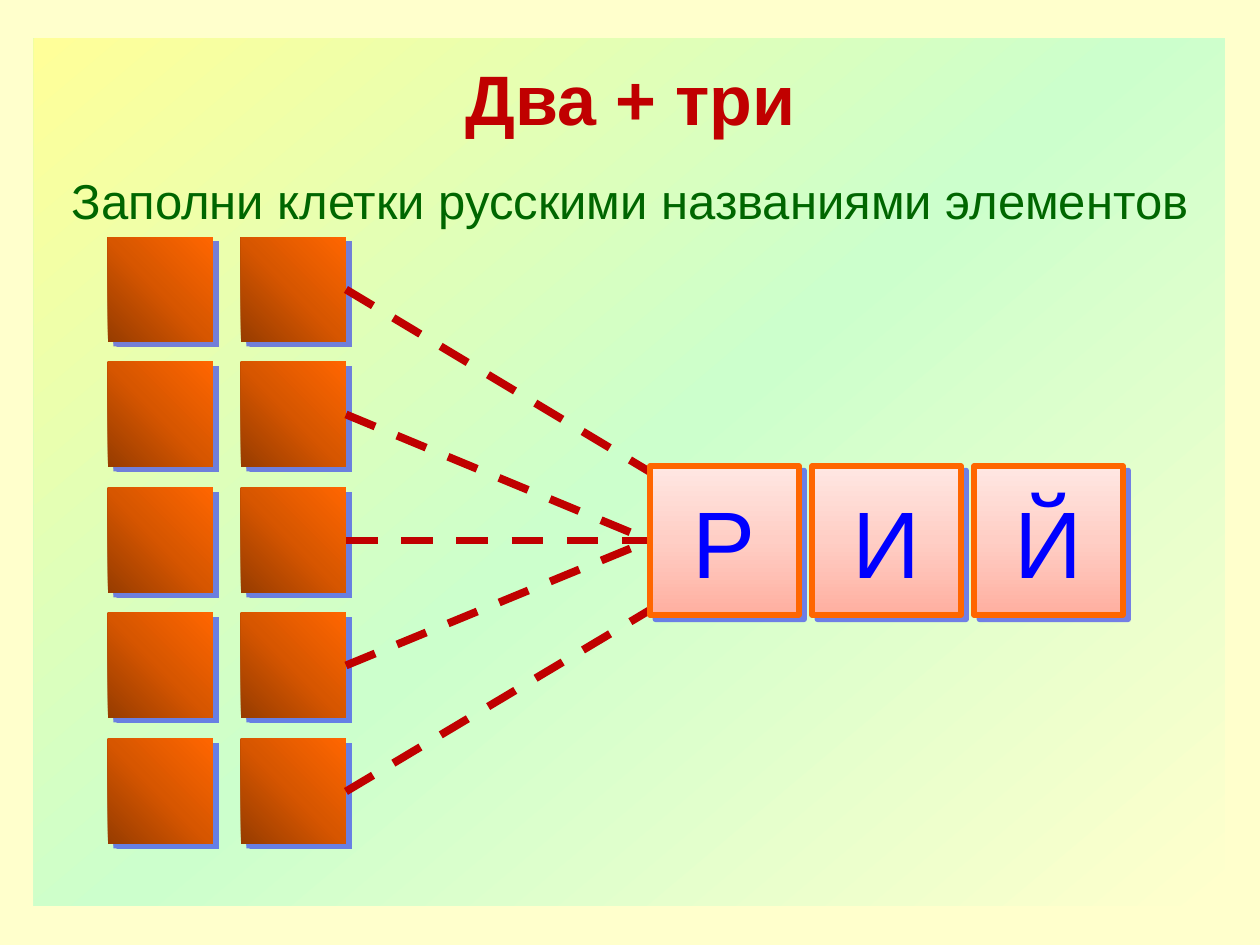
from copy import deepcopy
from dataclasses import dataclass

from lxml.etree import SubElement
from pptx import Presentation
from pptx.dml.color import RGBColor
from pptx.enum.dml import MSO_LINE
from pptx.enum.shapes import MSO_CONNECTOR, MSO_SHAPE
from pptx.enum.text import MSO_ANCHOR, PP_ALIGN
from pptx.oxml.ns import qn
from pptx.util import Emu, Pt


@dataclass(frozen=True)
class Theme:
    font: str = "Arial"
    page: str = "FFFFCC"
    red: str = "C00000"
    green: str = "006600"
    blue: str = "0000FF"
    edge: str = "FF6600"
    panel: tuple = ("FFFFCC", "CCFFCC", "FFFF99")
    cell: tuple = ("973C00", "D75600", "FF6600")
    tile: tuple = ("FFAFA0", "FFCEC5", "FFE7E3")
    head: int = 40
    task: int = 28
    letter: int = 54


THEME = Theme()
ROWS, COLS = 5, 2


def px(n):
    return Emu(round(n * 914400 / 126))


def rgb(code):
    return RGBColor.from_string(code)


def apply(item, values):
    for name, value in values.items():
        setattr(item, name, value)


def blend(shape, colors, angle):
    """Fill with three even stops; the angle runs clockwise."""
    fill = shape.fill
    fill.gradient()
    fill.gradient_angle = 360 - angle
    stops = shape._element.spPr.find(qn("a:gradFill")).find(qn("a:gsLst"))
    stops.insert(1, deepcopy(stops[0]))
    for stop, color, place in zip(fill.gradient_stops, colors, (0, 0.5, 1)):
        stop.color.rgb = rgb(color)
        stop.position = place


def shade(shape):
    """Cast a half-clear blue shadow down and to the right."""
    effects = shape._element.spPr.find(qn("a:effectLst"))
    cast = SubElement(effects, qn("a:outerShdw"), blurRad="0", dist=str(Pt(4)),
                      dir=str(40 * 60000), algn="tl", rotWithShape="0")
    color = SubElement(cast, qn("a:srgbClr"), val=THEME.blue)
    SubElement(color, qn("a:alpha"), val="50000")


def write(shape, text, size, color, bold=False, anchor=MSO_ANCHOR.MIDDLE):
    frame = shape.text_frame
    apply(frame, {"text": text, "word_wrap": True, "vertical_anchor": anchor})
    line = frame.paragraphs[0]
    line.alignment = PP_ALIGN.CENTER
    font = line.runs[0].font
    apply(font, {"name": THEME.font, "size": Pt(size), "bold": bold})
    font.color.rgb = rgb(color)


def add_box(slide, left, top, width, height, colors, angle):
    box = slide.shapes.add_shape(
        MSO_SHAPE.RECTANGLE, px(left), px(top), px(width), px(height))
    box.shadow.inherit = False
    box.line.fill.background()
    blend(box, colors, angle)
    return box


def add_cell(slide, row, col):
    cell = add_box(slide, 108 + 133 * col, 237 + 251 * row // 2, 105, 105,
                   THEME.cell, 315)
    shade(cell)
    return cell


def add_tile(slide, index, letter):
    tile = add_box(slide, 650 + 162 * index, 466, 149, 149, THEME.tile, 270)
    tile.line.color.rgb = rgb(THEME.edge)
    tile.line.width = Pt(3)
    shade(tile)
    write(tile, letter, THEME.letter, THEME.blue)
    return tile


def add_dash(slide, cell, end):
    dash = slide.shapes.add_connector(
        MSO_CONNECTOR.STRAIGHT, px(346), px(290), px(650), px(end))
    dash.begin_connect(cell, 3)
    dash.line.color.rgb = rgb(THEME.red)
    apply(dash.line, {"width": Pt(4.5), "dash_style": MSO_LINE.DASH})
    SubElement(dash._element.spPr, qn("a:effectLst"))
    return dash


def main():
    deck = Presentation()
    apply(deck, {"slide_width": px(1260), "slide_height": px(945)})
    slide = deck.slides.add_slide(deck.slide_layouts[5])
    back = slide.background.fill
    back.solid()
    back.fore_color.rgb = rgb(THEME.page)

    # Panel, moved behind the title
    panel = add_box(slide, 34, 39, 1191, 867, THEME.panel, 230)
    title = slide.shapes.title
    title._element.addprevious(panel._element)

    # Title
    apply(title, {"left": px(335), "top": px(49),
                  "width": px(591), "height": px(99)})
    write(title, "Два + три", THEME.head, THEME.red, True, MSO_ANCHOR.TOP)

    # Empty cells, column by column
    grid = [[add_cell(slide, row, col) for row in range(ROWS)]
            for col in range(COLS)]

    # Dashed lines: the outer two end near the corners of the first tile
    ends = (472, 540, 540, 540, 610)
    dashes = [add_dash(slide, cell, end) for cell, end in zip(grid[-1], ends)]

    # Shared ending
    tiles = [add_tile(slide, i, letter) for i, letter in enumerate("РИЙ")]
    for dash in dashes[1:-1]:
        dash.end_connect(tiles[0], 1)

    # Task
    task = slide.shapes.add_textbox(px(0), px(137), px(1260), px(126))
    write(task, "Заполни клетки русскими названиями элементов",
          THEME.task, THEME.green)

    deck.save("out.pptx")


if __name__ == "__main__":
    main()
